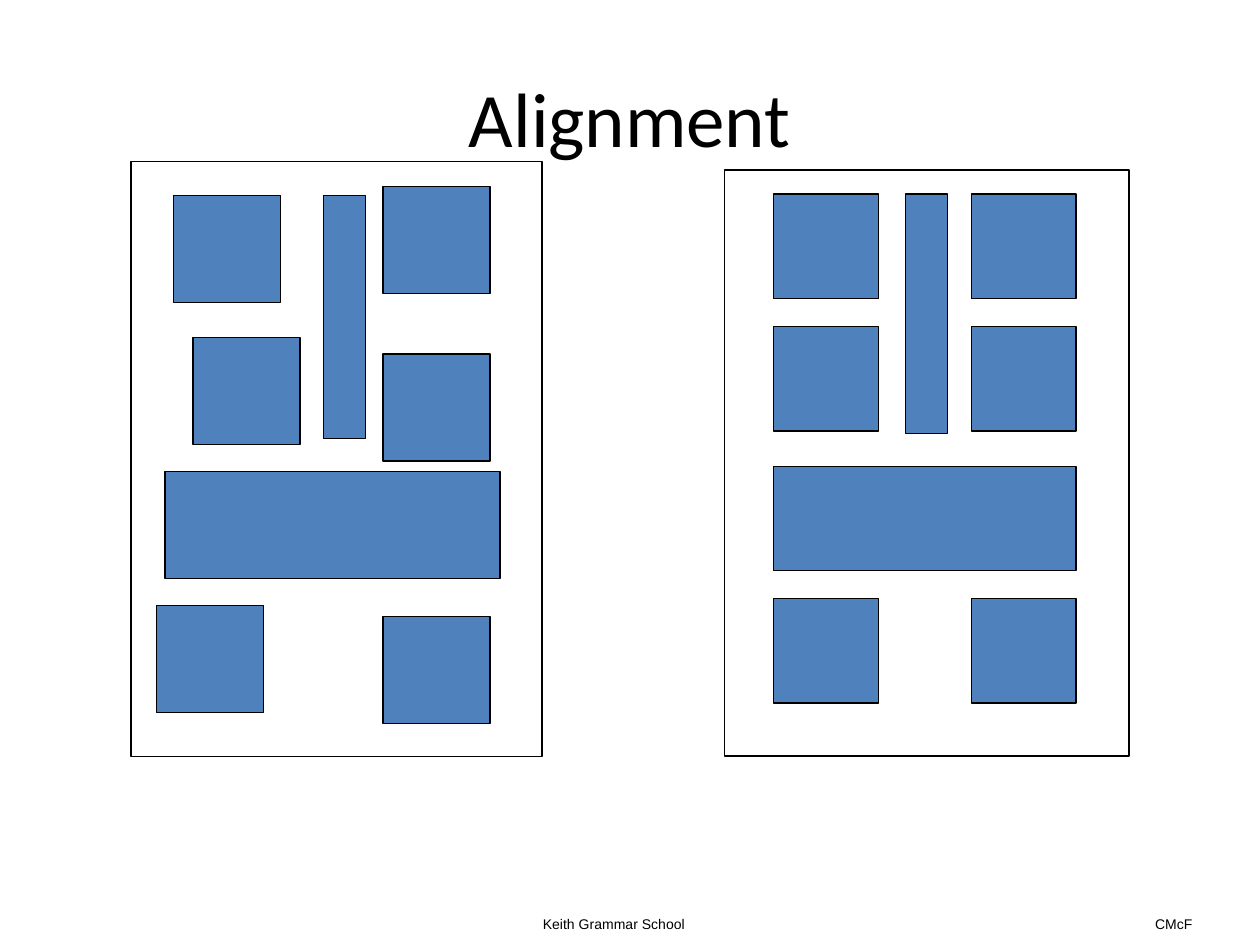
from dataclasses import dataclass
from itertools import product

from pptx import Presentation
from pptx.dml.color import RGBColor
from pptx.enum.shapes import MSO_SHAPE as Shape
from pptx.enum.text import MSO_ANCHOR as Anchor, MSO_AUTO_SIZE as AutoSize, PP_ALIGN as Align
from pptx.slide import Slide
from pptx.util import Pt

BLACK = RGBColor(0x00, 0x00, 0x00)
WHITE = RGBColor(0xFF, 0xFF, 0xFF)
BLUE = RGBColor(0x4F, 0x81, 0xBD)


@dataclass(frozen=True)
class Area:
    left: float
    top: float
    width: float
    height: float

    def lengths(self) -> tuple[Pt, Pt, Pt, Pt]:
        return Pt(self.left), Pt(self.top), Pt(self.width), Pt(self.height)


@dataclass(frozen=True)
class Layout:
    sheet: Area
    blocks: list[Area]


@dataclass(frozen=True)
class Label:
    text: str
    area: Area


def squares(corners: list[tuple[float, float]], side: float) -> list[Area]:
    return [Area(left, top, side, side) for left, top in corners]


COLUMNS = (442.1, 555.1)
ROWS = (110.9, 186.5, 342)
SIDE = 59.8

ALIGNED = Layout(
    Area(414, 97.2, 231.1, 334.8),
    squares(list(product(COLUMNS, ROWS)), SIDE)
    + [
        Area(COLUMNS[0], 266.4, COLUMNS[1] + SIDE - COLUMNS[0], SIDE),
        Area(517.5, ROWS[0], 23.8, 136.8),
    ],
)

MISALIGNED_CORNERS = [
    (99.2, 111.6),
    (110.2, 193),
    (89.3, 346),
    (218.9, 106.6),
    (218.9, 202.3),
    (218.9, 352.4),
]

MISALIGNED = Layout(
    Area(74.9, 92.2, 234.9, 340),
    squares(MISALIGNED_CORNERS, 61.2)
    + [Area(94.3, 269.3, 191.5, 61.2), Area(185, 111.6, 23.9, 139)],
)

LABELS = [
    Label("Keith Grammar School", Area(303.1, 519.8, 95.8, 16.6)),
    Label("CMcF", Area(653, 519.8, 36, 16.6)),
]


def add_span(para, text: str, font_name: str, size: float) -> None:
    span = para.add_run()
    span.text = text
    span.font.name = font_name
    span.font.size = Pt(size)
    span.font.color.rgb = BLACK


def add_label(page: Slide, label: Label) -> None:
    box = page.shapes.add_textbox(*label.area.lengths())
    box.text_frame.word_wrap = False
    box.text_frame.auto_size = AutoSize.SHAPE_TO_FIT_TEXT
    add_span(box.text_frame.paragraphs[0], label.text, "Arial", 8)


def add_title(page: Slide, text: str, area: Area) -> None:
    title = page.shapes.title
    title.left, title.top, title.width, title.height = area.lengths()
    title.text_frame.vertical_anchor = Anchor.MIDDLE
    para = title.text_frame.paragraphs[0]
    para.alignment = Align.CENTER
    add_span(para, text, "Calibri", 44)


def add_rectangle(page: Slide, area: Area, fill: RGBColor) -> None:
    box = page.shapes.add_shape(Shape.RECTANGLE, *area.lengths())
    box.shadow.inherit = False
    box.fill.solid()
    box.fill.fore_color.rgb = fill
    box.line.color.rgb = BLACK
    box.line.width = Pt(0.75)


def add_layout(page: Slide, layout: Layout) -> None:
    add_rectangle(page, layout.sheet, WHITE)
    for block in layout.blocks:
        add_rectangle(page, block, BLUE)


def main() -> None:
    deck = Presentation()
    deck.slide_width, deck.slide_height = Pt(720), Pt(540)
    page = deck.slides.add_slide(deck.slide_layouts.get_by_name("Title Only"))
    for label in LABELS:
        add_label(page, label)
    add_title(page, "Alignment", Area(36, 21.6, 648, 90))
    for layout in (ALIGNED, MISALIGNED):
        add_layout(page, layout)
    deck.save("out.pptx")


if __name__ == "__main__":
    main()
